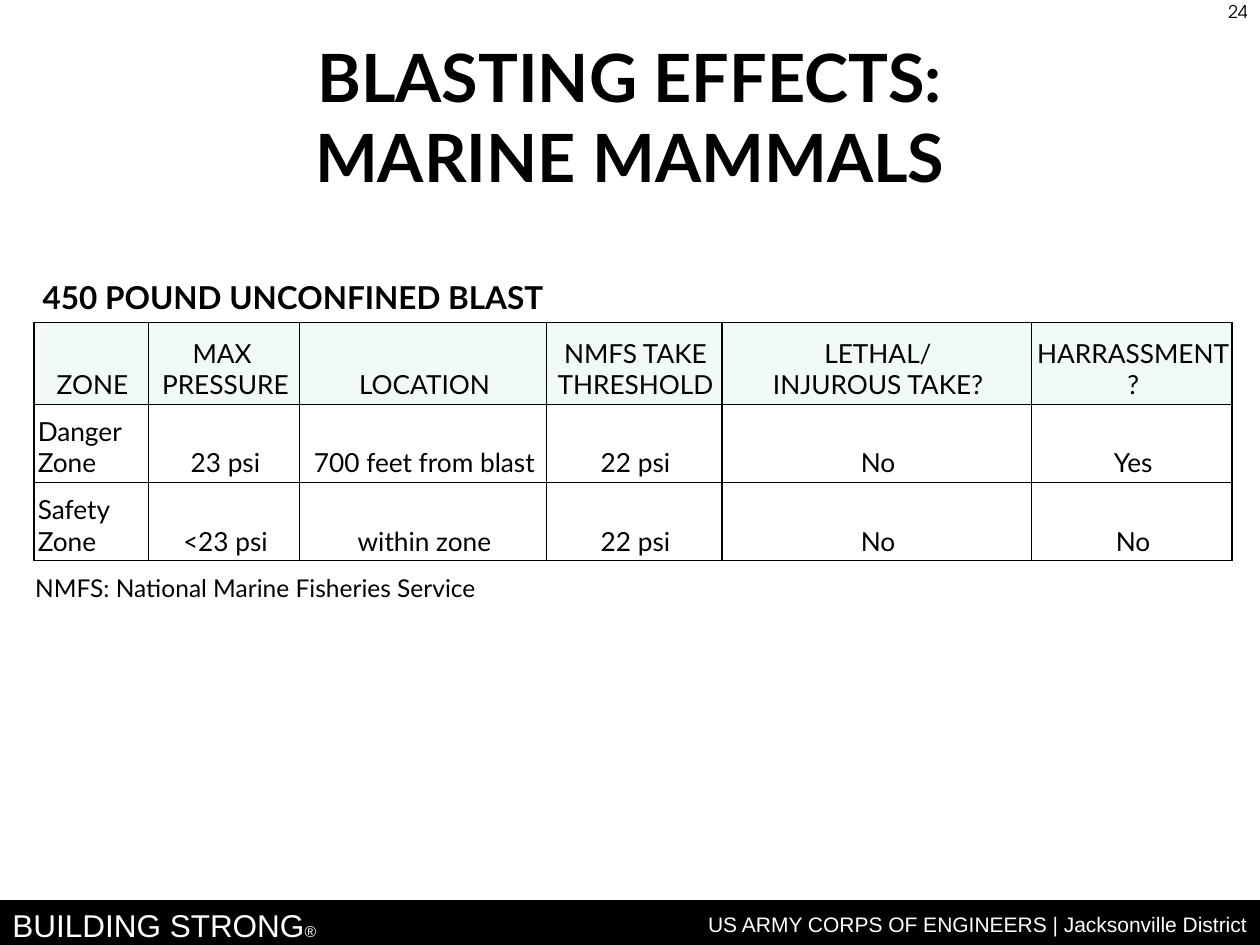
from copy import deepcopy

from lxml import etree
from pptx import Presentation
from pptx import util as u
from pptx.dml.color import RGBColor
from pptx.enum import shapes, text
from pptx.oxml import ns

Pt = u.Pt
BLACK = RGBColor(0, 0, 0)
WHITE = RGBColor(255, 255, 255)
HEADER_TINT = RGBColor(0xF1, 0xF9, 0xF9)
LEFT, CENTER, RIGHT = text.PP_ALIGN.LEFT, text.PP_ALIGN.CENTER, text.PP_ALIGN.RIGHT


def write(para, words, size, font="Lato", color=BLACK, bold=False, align=LEFT):
    """Append words to the paragraph; each newline becomes a line break of the same format."""
    para.alignment = align
    for number, line in enumerate(words.split("\n")):
        if number:
            para.add_line_break()
            para._p[-1].append(deepcopy(span._r.rPr))
        span = para.add_run()
        span.text = line
        span.font.size = Pt(size)
        span.font.name = font
        span.font.bold = bold
        span.font.color.rgb = color


def add_box(left, top, width, height, wrap=True):
    """Add a text box and return its first paragraph."""
    box = page.shapes.add_textbox(Pt(left), Pt(top), Pt(width), Pt(height))
    box.text_frame.word_wrap = wrap
    return box.text_frame.paragraphs[0]


deck = Presentation()
deck.slide_width, deck.slide_height = Pt(720), Pt(540)
page = deck.slides.add_slide(deck.slide_layouts[6])

# Footer band
band = page.shapes.add_shape(shapes.MSO_SHAPE.RECTANGLE, Pt(0), Pt(514.8), Pt(720), Pt(25.2))
band.shadow.inherit = False
band.fill.solid()
band.fill.fore_color.rgb = BLACK
band.line.color.rgb = BLACK
band.line.width = Pt(0.75)

motto = add_box(0, 514.1, 298, 20.2)
write(motto, "BUILDING STRONG", 18, font="Arial", color=WHITE)
write(motto, "®", 9, font="Arial", color=WHITE)

district = add_box(323.3, 519.1, 396.7, 20.2)
district.line_spacing = 0.9
write(district, "US ARMY CORPS OF ENGINEERS | Jacksonville District", 12,
      font="Arial", color=WHITE, align=RIGHT)

# Title and page number
title = add_box(0, 33.8, 720, 64.8)
page.shapes[-1].text_frame.vertical_anchor = text.MSO_ANCHOR.MIDDLE
write(title, "BLASTING EFFECTS:\nMARINE MAMMALS", 38, bold=True, align=CENTER)
write(add_box(552, -2.9, 168, 37.4), "24", 10, font="TeX Gyre Adventor", align=RIGHT)

# Table of zones
rows = [
    ["ZONE", "MAX \nPRESSURE", "LOCATION", "NMFS TAKE THRESHOLD",
     "LETHAL/\nINJUROUS TAKE?", "HARRASSMENT?"],
    ["Danger Zone", "23 psi", "700 feet from blast", "22 psi", "No", "Yes"],
    ["Safety Zone", "<23 psi", "within zone", "22 psi", "No", "No"],
]
widths = [65.5, 86.4, 141.1, 100.1, 177.1, 114.5]
heights = [46.8, 44.6, 44.6]
table = page.shapes.add_table(len(rows), len(widths), Pt(19.4), Pt(184.3),
                              Pt(sum(widths)), Pt(sum(heights))).table
table.first_row = table.horz_banding = False
for column, width in zip(table.columns, widths):
    column.width = Pt(width)

for r, (labels, height) in enumerate(zip(rows, heights)):
    table.rows[r].height = Pt(height)
    for c, label in enumerate(labels):
        cell = table.cell(r, c)
        cell.vertical_anchor = text.MSO_ANCHOR.BOTTOM
        cell.margin_left = cell.margin_top = cell.margin_bottom = Pt(2.2)
        cell.margin_right = Pt(0.7)
        write(cell.text_frame.paragraphs[0], label, 15, align=CENTER if r == 0 or c else LEFT)
        properties = cell._tc.get_or_add_tcPr()
        for side in ("lnL", "lnR", "lnT", "lnB"):
            border = etree.SubElement(properties, ns.qn(f"a:{side}"), w=str(Pt(1)))
            fill = etree.SubElement(border, ns.qn("a:solidFill"))
            etree.SubElement(fill, ns.qn("a:srgbClr"), val=str(BLACK))
        if r == 0:
            cell.fill.solid()
            cell.fill.fore_color.rgb = HEADER_TINT
        else:
            cell.fill.background()

# Table heading and note
write(add_box(17.3, 155.5, 316.1, 28.8, wrap=False), "450 POUND UNCONFINED BLAST", 18, bold=True)
write(add_box(13, 324, 269.3, 24.5, wrap=False), "NMFS: National Marine Fisheries Service", 14)

deck.save("out.pptx")
